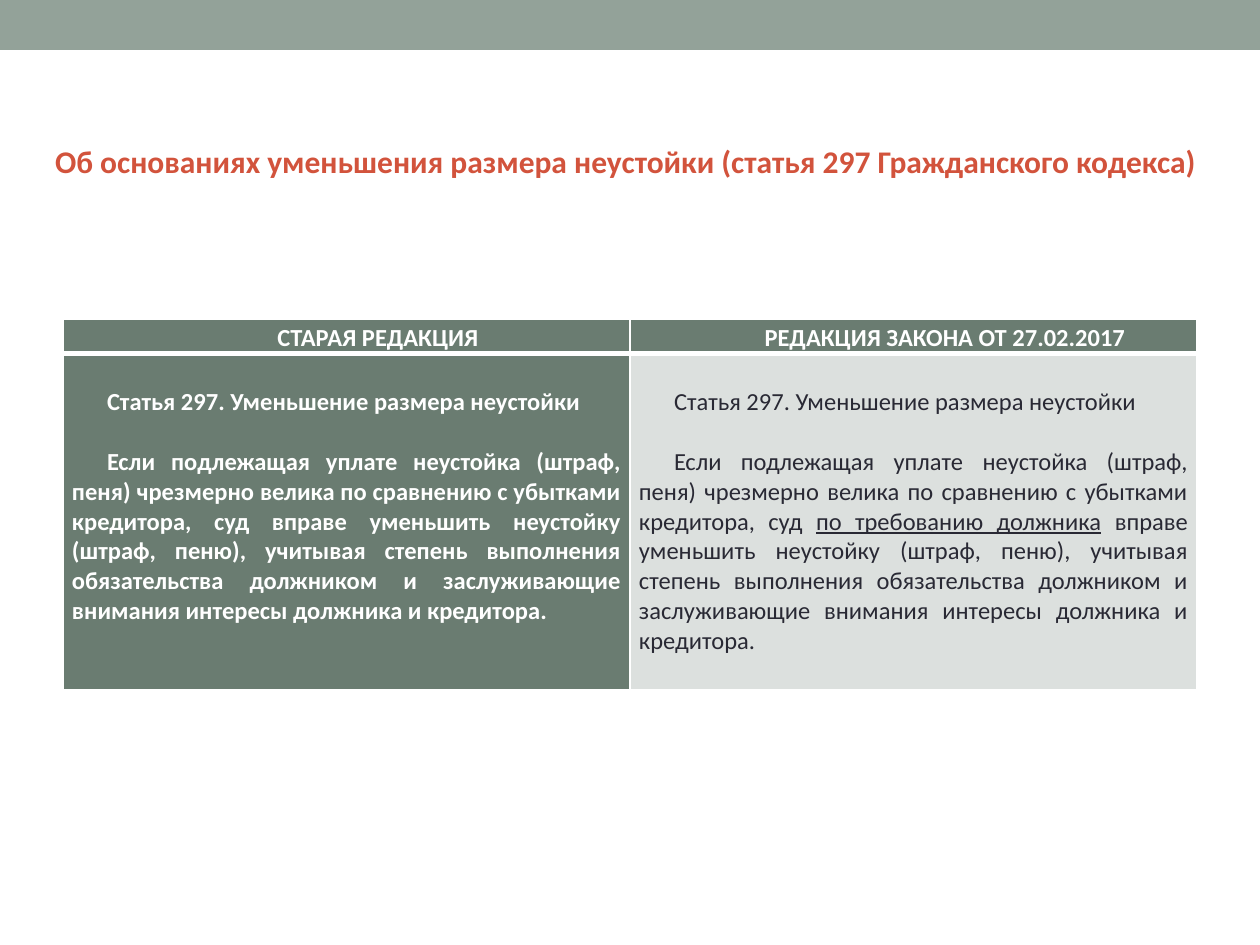
from dataclasses import dataclass

from lxml.etree import SubElement
from pptx import Presentation
from pptx.dml.color import RGBColor as RGB
from pptx.enum.shapes import MSO_SHAPE as Shape
from pptx.enum.text import MSO_ANCHOR as Anchor, PP_ALIGN as Align
from pptx.oxml.ns import qn
from pptx.util import Emu, Pt

PX_PER_INCH = 126
SLIDE_WIDTH, SLIDE_HEIGHT = 1260, 945


def px(length: int) -> Emu:
    return Emu(round(length * 914400 / PX_PER_INCH))


@dataclass(frozen=True)
class Theme:
    font: str = "Calibri"
    title_size: int = 18
    table_size: int = 14
    band: str = "93A299"
    title: str = "D2533C"
    dark: str = "6A7C71"
    light: str = "DCE0DE"
    ink: str = "292934"
    white: str = "FFFFFF"


THEME = Theme()


@dataclass(frozen=True)
class Edition:
    """One column: an edition of the article, with its inserted words underlined."""
    name: str
    before: str
    inserted: str
    after: str
    fill: str
    ink: str
    bold: bool


ARTICLE = "Статья 297. Уменьшение размера неустойки"
OPENING = ("Если подлежащая уплате неустойка (штраф, пеня) чрезмерно велика "
           "по сравнению с убытками кредитора, суд ")
ENDING = ("вправе уменьшить неустойку (штраф, пеню), учитывая степень выполнения "
          "обязательства должником и заслуживающие внимания интересы должника и кредитора.")
EDITIONS = (
    Edition("СТАРАЯ РЕДАКЦИЯ", OPENING, "", ENDING, THEME.dark, THEME.white, True),
    Edition("РЕДАКЦИЯ ЗАКОНА ОТ 27.02.2017", OPENING, "по требованию должника",
            " " + ENDING, THEME.light, THEME.ink, False),
)


def style(paragraph, size: int, color: str, bold: bool, align) -> None:
    paragraph.alignment = align
    font = paragraph.font
    font.name, font.size, font.bold = THEME.font, Pt(size), bold
    font.color.rgb = RGB.from_string(color)


def indent(paragraph, left: int, first_line: int) -> None:
    properties = paragraph._p.get_or_add_pPr()
    properties.set("marL", str(px(left)))
    properties.set("indent", str(px(first_line)))


def fill_cell(cell, color: str, padding: int, bottom_border: int) -> None:
    cell.margin_left = cell.margin_right = px(9)
    cell.margin_top = cell.margin_bottom = px(padding)
    properties = cell._tc.get_or_add_tcPr()
    for side, width in (("L", 1), ("R", 1), ("T", 1), ("B", bottom_border)):
        line = SubElement(properties, qn(f"a:ln{side}"), w=str(Pt(width)))
        solid = SubElement(line, qn("a:solidFill"))
        SubElement(solid, qn("a:srgbClr"), val=THEME.white)
    cell.fill.solid()
    cell.fill.fore_color.rgb = RGB.from_string(color)


def add_box(slide, left: int, top: int, width: int, height: int, color: str):
    box = slide.shapes.add_shape(Shape.RECTANGLE, px(left), px(top), px(width), px(height))
    box.shadow.inherit = False
    box.fill.solid()
    box.fill.fore_color.rgb = RGB.from_string(color)
    box.line.fill.background()
    return box


def add_title(slide, text: str) -> None:
    frame = add_box(slide, 42, 135, 1201, 89, THEME.white).text_frame
    frame.word_wrap = True
    frame.vertical_anchor = Anchor.MIDDLE
    frame.margin_left = frame.margin_right = px(13)
    frame.margin_top, frame.margin_bottom = px(6), px(44)
    title = frame.paragraphs[0]
    title.text = text
    style(title, THEME.title_size, THEME.title, True, Align.LEFT)


def write_header(cell, edition: Edition) -> None:
    fill_cell(cell, THEME.dark, padding=0, bottom_border=3)
    name = cell.text_frame.paragraphs[0]
    name.text = edition.name
    name.line_spacing = 1.15
    style(name, THEME.table_size, THEME.white, True, Align.CENTER)
    indent(name, 63, 0)


def write_article(cell, edition: Edition) -> None:
    fill_cell(cell, edition.fill, padding=34, bottom_border=1)
    heading = cell.text_frame.paragraphs[0]
    heading.text = ARTICLE
    heading.space_after = px(30)
    body = cell.text_frame.add_paragraph()
    for text, underline in ((edition.before, False), (edition.inserted, True),
                            (edition.after, False)):
        if text:
            run = body.add_run()
            run.text = text
            run.font.underline = underline
    for paragraph in (heading, body):
        style(paragraph, THEME.table_size, edition.ink, edition.bold, Align.JUSTIFY)
        indent(paragraph, 0, 35)


def add_comparison(slide) -> None:
    header_height, article_height, column_width = 34, 331, 567
    table = slide.shapes.add_table(
        2, len(EDITIONS), px(63), px(319),
        px(column_width * len(EDITIONS)), px(header_height + article_height)).table
    table.horz_banding = False
    table.rows[0].height = px(header_height)
    table.rows[1].height = px(article_height)
    for column, edition in enumerate(EDITIONS):
        table.columns[column].width = px(column_width)
        write_header(table.cell(0, column), edition)
        write_article(table.cell(1, column), edition)


def main() -> None:
    deck = Presentation()
    deck.slide_width, deck.slide_height = px(SLIDE_WIDTH), px(SLIDE_HEIGHT)
    slide = deck.slides.add_slide(deck.slide_layouts[6])
    add_box(slide, 0, 0, SLIDE_WIDTH, 50, THEME.band)
    add_title(slide, "Об основаниях уменьшения размера неустойки "
                     "(статья 297 Гражданского кодекса)")
    add_comparison(slide)
    deck.save("out.pptx")


if __name__ == "__main__":
    main()
